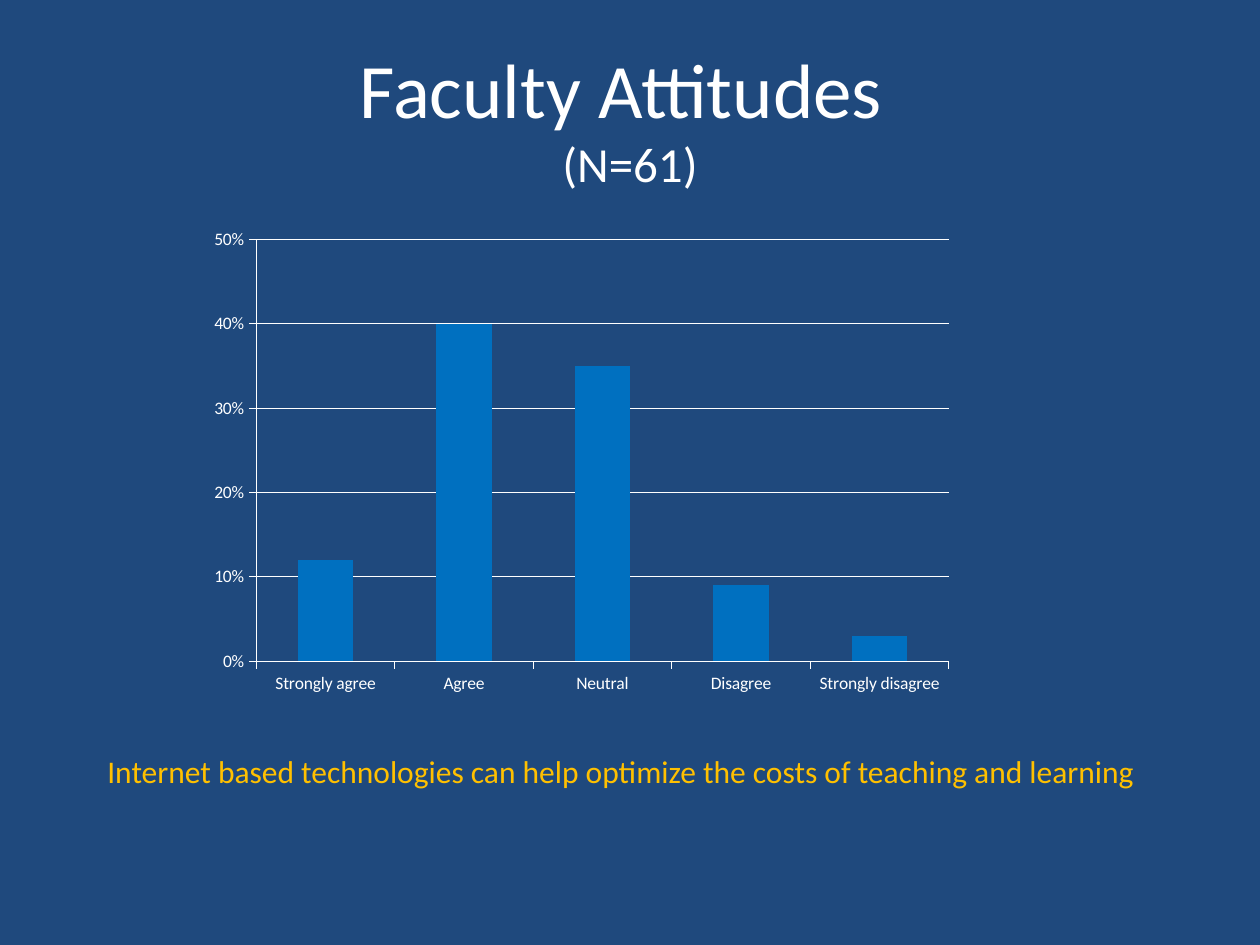
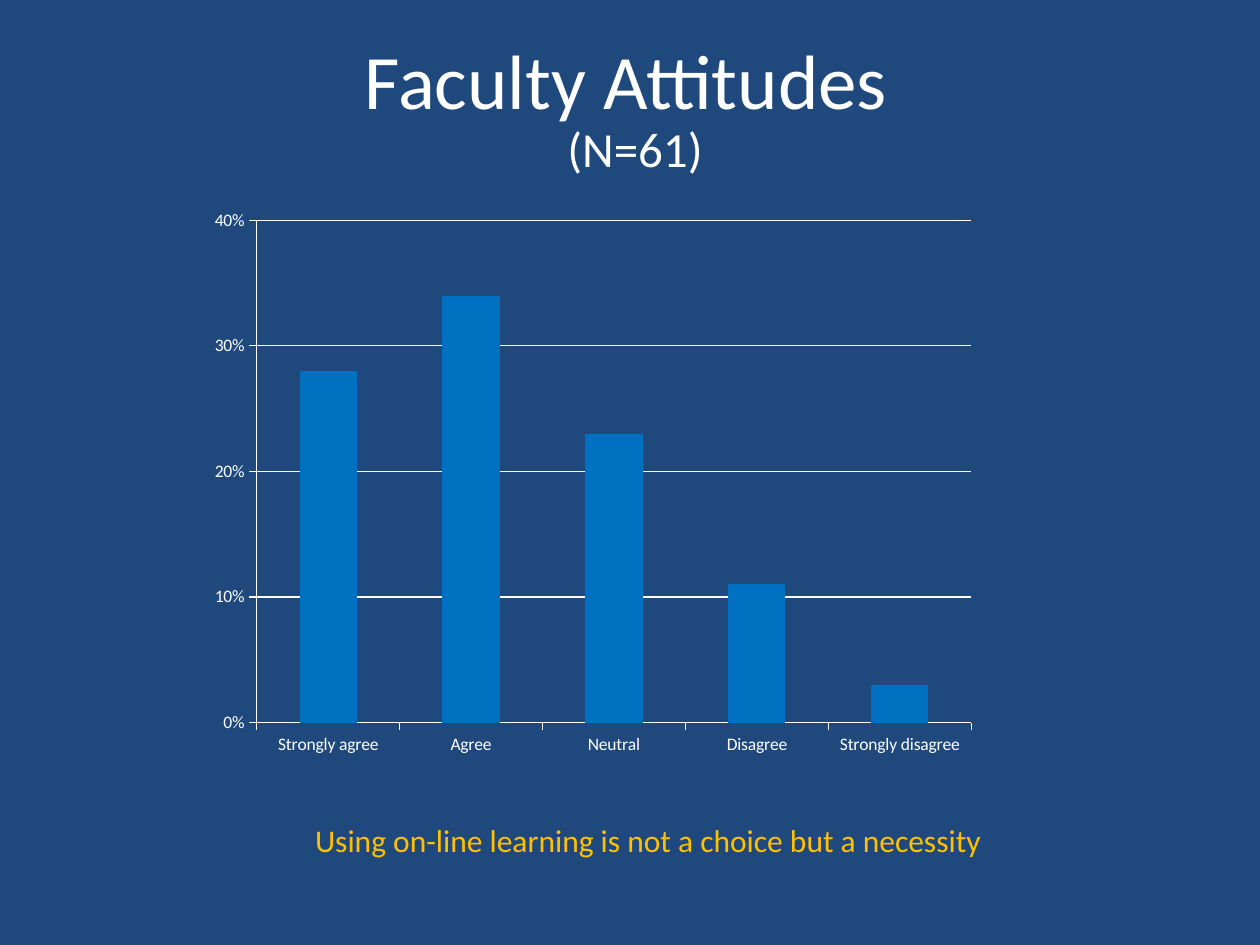
import pptx
import pptx.chart.data
import pptx.dml.color
import pptx.enum.chart
import pptx.enum.text
import pptx.oxml.ns
import pptx.util
from dataclasses import dataclass


@dataclass(frozen=True)
class Theme:
    font: str = "Calibri"
    background: str = "1F497D"
    text: str = "FFFFFF"
    bar: str = "0070C0"
    caption: str = "FFC000"
    title_size: int = 44
    sample_size: int = 28
    caption_size: int = 18
    chart_size: int = 10


THEME = Theme()
EMU_PER_PX = 914400 / 126
NO_TABLE_STYLE = "{2D5ABB26-0587-4C30-8999-92F81FD0307C}"
TITLE = "Faculty Attitudes "
SAMPLE = "(N=61)"
ANSWERS = ["Strongly agree", "Agree", "Neutral", "Disagree", "Strongly disagree"]

SLIDES = [
    {
        "title_box": (63, 38, 1134, 158),
        "title_spacing": None,
        "chart_box": (199, 220, 765, 483),
        "shares": [0.12, 0.4, 0.35, 0.09, 0.03],
        "top": 0.5,
        "caption": "Internet based technologies can help optimize the costs of teaching and learning",
        "caption_box": (95, 746, 1081, 50),
        "caption_in_table": False,
    },
    {
        "title_box": (63, 38, 1144, 173),
        "title_spacing": 30,
        "chart_box": (199, 199, 788, 567),
        "shares": [0.28, 0.34, 0.23, 0.11, 0.03],
        "top": 0.4,
        "caption": "Using on-line learning is not a choice but a necessity",
        "caption_box": (315, 819, 672, 42),
        "caption_in_table": True,
    },
]


def emu(box):
    return [pptx.util.Emu(round(px * EMU_PER_PX)) for px in box]


def rgb(color):
    return pptx.dml.color.RGBColor.from_string(color)


def set_font(font, size, color):
    font.name = THEME.font
    font.size = pptx.util.Pt(size)
    font.color.rgb = rgb(color)


def add_title(slide, box, spacing):
    sp = slide.shapes.title
    sp.left, sp.top, sp.width, sp.height = emu(box)
    tf = sp.text_frame
    tf.vertical_anchor = pptx.enum.text.MSO_ANCHOR.MIDDLE
    p = tf.paragraphs[0]
    p.alignment = pptx.enum.text.PP_ALIGN.CENTER
    if spacing:
        p.line_spacing = pptx.util.Pt(spacing)
    set_font(p.font, THEME.title_size, THEME.text)
    p.add_run().text = TITLE
    p.add_line_break()
    r = p.add_run()
    r.text = SAMPLE
    r.font.size = pptx.util.Pt(THEME.sample_size)


def style_line(line):
    line.color.rgb = rgb(THEME.text)
    line.width = pptx.util.Pt(0.75)


def add_chart(slide, box, shares, top):
    data = pptx.chart.data.CategoryChartData(number_format="0%")
    data.categories = ANSWERS
    data.add_series("Series 1", shares)
    kind = pptx.enum.chart.XL_CHART_TYPE.COLUMN_CLUSTERED
    chart = slide.shapes.add_chart(kind, *emu(box), data).chart
    chart.has_legend = False
    chart.has_title = False
    set_font(chart.font, THEME.chart_size, THEME.text)

    plot = chart.plots[0]
    plot.gap_width = 150
    plot.vary_by_categories = False
    fill = plot.series[0].format.fill
    fill.solid()
    fill.fore_color.rgb = rgb(THEME.bar)

    for axis in (chart.category_axis, chart.value_axis):
        axis.major_tick_mark = pptx.enum.chart.XL_TICK_MARK.OUTSIDE
        style_line(axis.format.line)
    axis = chart.value_axis
    axis.minimum_scale = 0
    axis.maximum_scale = top
    axis.major_unit = 0.1
    axis.has_major_gridlines = True
    style_line(axis.major_gridlines.format.line)
    axis.tick_labels.number_format = "0%"
    axis.tick_labels.number_format_is_linked = False


def add_caption_cell(slide, box):
    table = slide.shapes.add_table(1, 1, *emu(box)).table
    table.first_row = False
    table.horz_banding = False
    style = table._tbl.tblPr.find(pptx.oxml.ns.qn("a:tableStyleId"))
    style.text = NO_TABLE_STYLE
    cell = table.cell(0, 0)
    cell.fill.background()
    cell.vertical_anchor = pptx.enum.text.MSO_ANCHOR.BOTTOM
    cell.margin_left = cell.margin_right = cell.margin_top = cell.margin_bottom = 0
    return cell.text_frame


def add_caption_box(slide, box):
    tf = slide.shapes.add_textbox(*emu(box)).text_frame
    tf.word_wrap = True
    tf.auto_size = pptx.enum.text.MSO_AUTO_SIZE.SHAPE_TO_FIT_TEXT
    return tf


def add_caption(slide, text, box, in_table):
    tf = (add_caption_cell if in_table else add_caption_box)(slide, box)
    p = tf.paragraphs[0]
    p.text = text
    set_font(p.font, THEME.caption_size, THEME.caption)


def main():
    prs = pptx.Presentation()
    prs.slide_width, prs.slide_height = emu((1260, 945))
    fill = prs.slide_master.background.fill
    fill.solid()
    fill.fore_color.rgb = rgb(THEME.background)
    for item in SLIDES:
        slide = prs.slides.add_slide(prs.slide_layouts.get_by_name("Title Only"))
        add_title(slide, item["title_box"], item["title_spacing"])
        add_chart(slide, item["chart_box"], item["shares"], item["top"])
        add_caption(slide, item["caption"], item["caption_box"], item["caption_in_table"])
    prs.save("out.pptx")


if __name__ == "__main__":
    main()
